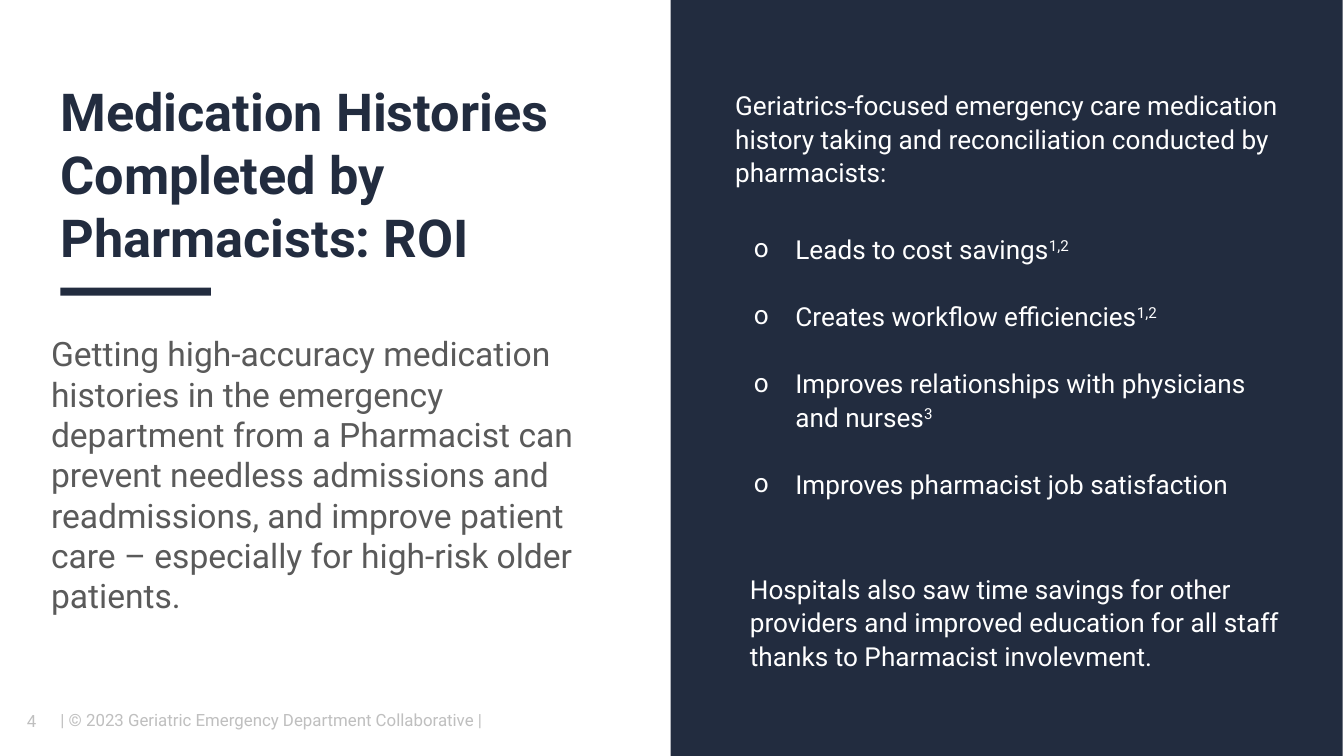
from pptx import Presentation
from pptx.dml.color import RGBColor
from pptx.enum import shapes, text
from pptx.oxml import ns
from pptx.util import Inches, Pt
from lxml import etree

FONT = "Roboto"
NAVY, GREY, PALE, WHITE = "222C3F", "5A5A5A", "BFBFBF", "FFFFFF"
WIDE = 10
HIGH = WIDE * 9 / 16

BARS = [(4.99, 0, 5, HIGH), (0.45, 2.14, 1.12, 0.06)]

NOTES = [
    dict(at=(0.02, 5.21, 0.43, 0.3), body="4", size=9, color=PALE,
         pad=None, mid=True, center=True),
    dict(at=(0.45, 5.28, 3.95, 0.15), size=9, color=PALE, mid=True,
         body="| © 2023 Geriatric Emergency Department Collaborative |"),
    dict(at=(0.45, 0.59, 4.34, 1.41), size=28, color=NAVY, bold=True,
         body="Medication Histories Completed by Pharmacists: ROI"),
    dict(at=(0.38, 2.48, 4.16, 2.12), size=18, color=GREY, after=8,
         body="Getting high-accuracy medication histories in the emergency "
              "department from a Pharmacist can prevent needless admissions "
              "and readmissions, and improve patient care – especially for "
              "high-risk older patients."),
    dict(at=(5.47, 0.65, 4.15, 0.74), size=14, color=WHITE, line=1.07, after=8,
         body="Geriatrics-focused emergency care medication history taking "
              "and reconciliation conducted\u00a0by pharmacists:"),
    dict(at=(5.38, 4.25, 4.24, 0.74), size=14, color=WHITE, line=1.07, after=8,
         left=0.2,
         body="Hospitals also saw time savings for other providers and "
              "improved education for all staff thanks to Pharmacist "
              "involevment."),
]

GAINS = [
    ("Leads to cost savings", "1,2"),
    ("Creates workflow efficiencies", "1,2"),
    ("Improves relationships with physicians and nurses", "3"),
    ("Improves pharmacist job satisfaction", ""),
]


def paint(hue):
    return RGBColor.from_string(hue)


def add_bar(slide, at):
    bar = slide.shapes.add_shape(shapes.MSO_SHAPE.RECTANGLE, *map(Inches, at))
    bar.shadow.inherit = False
    bar.fill.solid()
    bar.fill.fore_color.rgb = paint(NAVY)
    bar.line.fill.background()


def add_box(slide, at, pad=0):
    frame = slide.shapes.add_textbox(*map(Inches, at)).text_frame
    frame.word_wrap = True
    if pad is not None:
        frame.margin_left = frame.margin_right = Inches(pad)
        frame.margin_top = frame.margin_bottom = Inches(pad)
    return frame


def add_run(para, body, size, color, bold=False, raised=False):
    run = para.add_run()
    run.text = body
    font = run.font
    font.name, font.size, font.bold = FONT, Pt(size), bold
    font.color.rgb = paint(color)
    if raised:
        run._r.get_or_add_rPr().set("baseline", "30000")


def indent(para, left, first=0):
    props = para._p.get_or_add_pPr()
    props.set("marL", str(Inches(left)))
    props.set("indent", str(Inches(first)))
    return props


def add_note(slide, at, body, size, color, pad=0, mid=False, center=False,
             bold=False, line=None, after=0, left=0):
    frame = add_box(slide, at, pad)
    if mid:
        frame.vertical_anchor = text.MSO_ANCHOR.MIDDLE
    para = frame.paragraphs[0]
    if center:
        para.alignment = text.PP_ALIGN.CENTER
    if line:
        para.line_spacing = line
    para.space_after = Pt(after)
    if left:
        indent(para, left)
    add_run(para, body, size, color, bold)


def add_gains(slide):
    frame = add_box(slide, (5.38, 1.67, 4.24, 2.27), None)
    for i, (gain, cite) in enumerate(GAINS):
        para = frame.add_paragraph() if i else frame.paragraphs[0]
        props = indent(para, 0.44, -0.31)
        etree.SubElement(props, ns.qn("a:buFont")).set("typeface", FONT)
        etree.SubElement(props, ns.qn("a:buChar")).set("char", "o")
        para.line_spacing = 1.07
        if i:
            para.space_before = Pt(18)
        add_run(para, gain, 14, WHITE)
        if cite:
            add_run(para, cite, 14, WHITE, raised=True)


def main():
    deck = Presentation()
    deck.slide_width, deck.slide_height = Inches(WIDE), Inches(HIGH)
    slide = deck.slides.add_slide(deck.slide_layouts[6])
    for at in BARS:
        add_bar(slide, at)
    for note in NOTES:
        add_note(slide, **note)
    add_gains(slide)
    deck.save("out.pptx")


if __name__ == "__main__":
    main()
